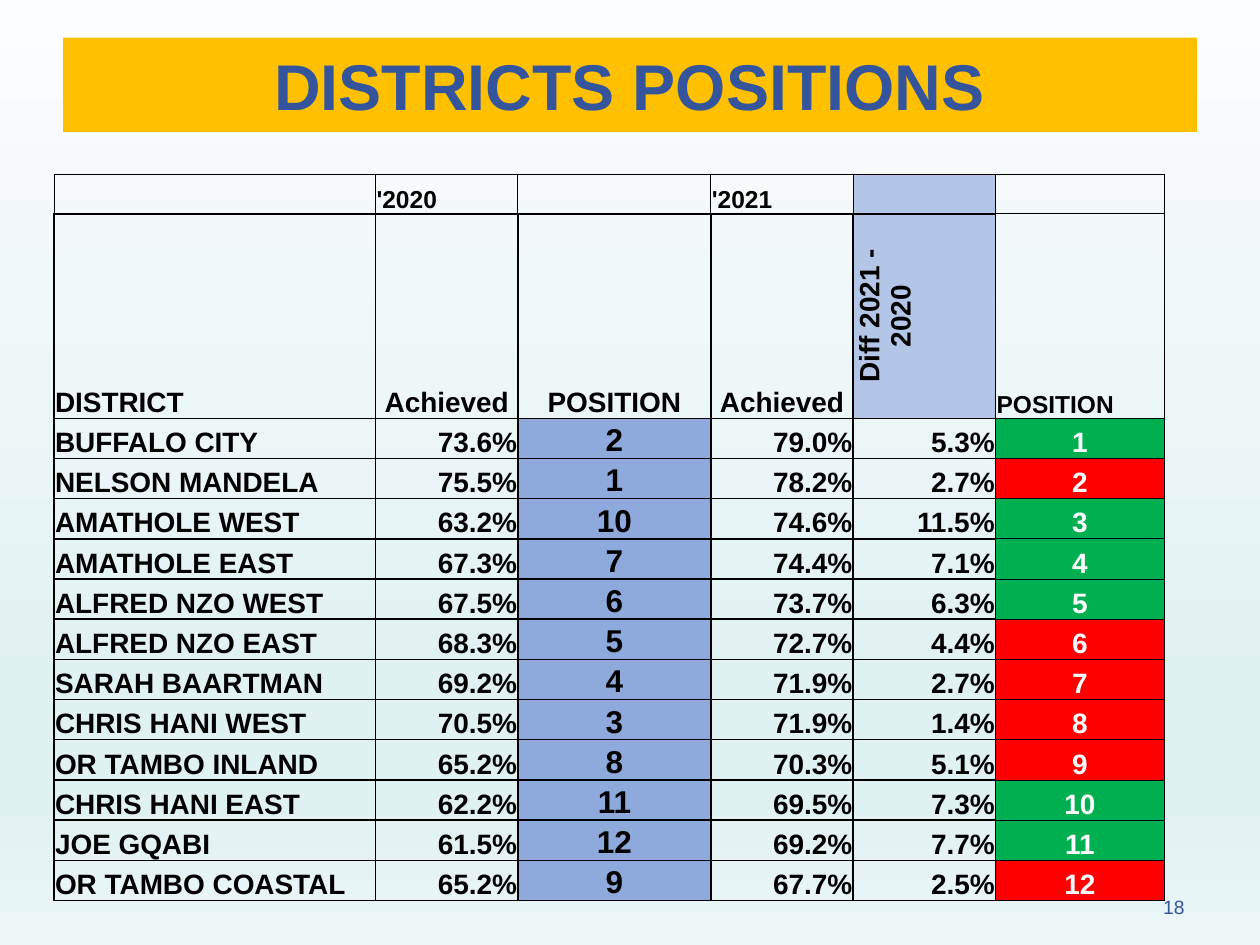
from copy import deepcopy

from lxml.etree import SubElement
from pptx import Presentation
from pptx.dml.color import RGBColor
from pptx.enum.text import MSO_ANCHOR as Anchor, MSO_AUTO_SIZE as AutoSize, PP_ALIGN as Align
from pptx.oxml.ns import qn
from pptx.util import Cm, Pt

TITLE = "DISTRICTS POSITIONS"
PAGE_NUMBER = "18"
YEARS = ["", "'2020", "", "'2021", "", ""]
HEADINGS = ["DISTRICT", "Achieved", "POSITION", "Achieved", "Diff 2021 - 2020", "POSITION"]
# District, achieved 2020, position 2020, achieved 2021, difference; in 2021 order
DISTRICTS = [
    ("BUFFALO CITY", "73.6%", 2, "79.0%", "5.3%"),
    ("NELSON MANDELA", "75.5%", 1, "78.2%", "2.7%"),
    ("AMATHOLE WEST", "63.2%", 10, "74.6%", "11.5%"),
    ("AMATHOLE EAST", "67.3%", 7, "74.4%", "7.1%"),
    ("ALFRED NZO WEST", "67.5%", 6, "73.7%", "6.3%"),
    ("ALFRED NZO EAST", "68.3%", 5, "72.7%", "4.4%"),
    ("SARAH BAARTMAN", "69.2%", 4, "71.9%", "2.7%"),
    ("CHRIS HANI WEST", "70.5%", 3, "71.9%", "1.4%"),
    ("OR TAMBO INLAND", "65.2%", 8, "70.3%", "5.1%"),
    ("CHRIS HANI EAST", "62.2%", 11, "69.5%", "7.3%"),
    ("JOE GQABI", "61.5%", 12, "69.2%", "7.7%"),
    ("OR TAMBO COASTAL", "65.2%", 9, "67.7%", "2.5%"),
]
COLUMN_WIDTHS = [6.48, 2.87, 3.89, 2.87, 2.87, 3.4]
YEAR_HEIGHT, HEADING_HEIGHT, DISTRICT_HEIGHT = 0.79, 2.06, 0.81
HEADING_ALIGNS = [Align.LEFT] + [Align.CENTER] * 4 + [Align.LEFT]
DISTRICT_ALIGNS = [Align.LEFT, Align.RIGHT, Align.CENTER, Align.RIGHT, Align.RIGHT, Align.CENTER]
OLD_POSITION, DIFFERENCE, NEW_POSITION = 2, 4, 5

BLACK, WHITE, NAVY, AMBER = "000000", "FFFFFF", "34549C", "FFC000"
PALE_BLUE, MID_BLUE, GREEN, RED = "B4C6E7", "8EA9DB", "00B050", "FF0000"
BACKGROUND = [(0, "FCFDFE"), (0.74, "E0F1F2"), (0.83, "E0F1F2"), (1, "EBF6F7")]
THIN, THICK = 0.5, 1
CELL_FORMAT = {"margin_left": Cm(0.02), "margin_right": Cm(0.02), "margin_top": Cm(0.02),
               "margin_bottom": 0, "vertical_anchor": Anchor.BOTTOM}


def rgb(color):
    return RGBColor.from_string(color)


def write(frame, text, size, color, align, bold=True):
    paragraph = frame.paragraphs[0]
    paragraph.alignment = align
    run = paragraph.add_run()
    run.text = text
    for name, value in {"name": "Arial", "size": Pt(size), "bold": bold}.items():
        setattr(run.font, name, value)
    run.font.color.rgb = rgb(color)
    return paragraph


def paint_background(slide):
    fill = slide.background.fill
    fill.gradient()
    fill.gradient_angle = 270
    stop_list = slide.element.find(".//" + qn("a:gsLst"))
    while len(stop_list) < len(BACKGROUND):
        stop_list.append(deepcopy(stop_list[0]))
    for stop, (position, color) in zip(fill.gradient_stops, BACKGROUND):
        stop.position = position
        stop.color.rgb = rgb(color)


def draw_borders(cell, row, column):
    widths = dict.fromkeys("LRTB", THICK)
    if column == NEW_POSITION:
        widths = {"L": THICK if row else THIN, "R": THIN, "T": THIN, "B": THIN}
    elif row == 0:
        widths = {"L": THIN, "R": THIN, "T": THIN, "B": THICK}
    properties = cell._tc.get_or_add_tcPr()
    for side, width in widths.items():
        line = SubElement(properties, qn(f"a:ln{side}"), w=str(Pt(width)))
        SubElement(SubElement(line, qn("a:solidFill")), qn("a:srgbClr"), val=BLACK)


def cell_look(row, column, old_position, new_position):
    """Return text size, text colour, alignment and fill of a cell."""
    if row == 0:
        return 14, BLACK, Align.LEFT, PALE_BLUE if column == DIFFERENCE else None
    if row == 1:
        size = 14 if column == NEW_POSITION else 16
        return size, BLACK, HEADING_ALIGNS[column], PALE_BLUE if column == DIFFERENCE else None
    align = DISTRICT_ALIGNS[column]
    if column == OLD_POSITION:
        return 18, BLACK, align, MID_BLUE
    if column == NEW_POSITION:
        return 16, WHITE, align, GREEN if new_position < old_position else RED
    return 16, BLACK, align, None


def add_positions_table(slide):
    rows = [YEARS, HEADINGS] + [(*district, rank) for rank, district in enumerate(DISTRICTS, 1)]
    heights = [YEAR_HEIGHT, HEADING_HEIGHT] + [DISTRICT_HEIGHT] * len(DISTRICTS)
    table = slide.shapes.add_table(len(rows), len(COLUMN_WIDTHS), Cm(1.09), Cm(3.52),
                                   Cm(sum(COLUMN_WIDTHS)), Cm(sum(heights))).table
    table.first_row = table.horz_banding = False
    for column, width in zip(table.columns, COLUMN_WIDTHS):
        column.width = Cm(width)
    for r, (values, height) in enumerate(zip(rows, heights)):
        table.rows[r].height = Cm(height)
        for c, value in enumerate(values):
            cell = table.cell(r, c)
            for name, setting in CELL_FORMAT.items():
                setattr(cell, name, setting)
            draw_borders(cell, r, c)
            size, color, align, fill = cell_look(r, c, values[OLD_POSITION], values[NEW_POSITION])
            if fill:
                cell.fill.solid()
                cell.fill.fore_color.rgb = rgb(fill)
            else:
                cell.fill.background()
            if value:
                write(cell.text_frame, str(value), size, color, align)
    table.cell(1, DIFFERENCE)._tc.get_or_add_tcPr().set("vert", "vert270")


def add_title(slide):
    title = slide.shapes.title
    place = {"left": 1.27, "top": 0.76, "width": 22.86, "height": 1.9}
    for name, length in place.items():
        setattr(title, name, Cm(length))
    title.fill.solid()
    title.fill.fore_color.rgb = rgb(AMBER)
    title.text_frame.auto_size = AutoSize.NONE
    title.text_frame.vertical_anchor = Anchor.MIDDLE
    write(title.text_frame, TITLE, 36.9, NAVY, Align.CENTER)


def add_page_number(slide):
    frame = slide.shapes.add_textbox(Cm(18.21), Cm(17.98), Cm(5.92), Cm(0.69)).text_frame
    frame.word_wrap = True
    number = write(frame, PAGE_NUMBER, 11, NAVY, Align.RIGHT, bold=False)
    number.line_spacing = 0.9
    number.space_after = Pt(6)


def main():
    deck = Presentation()
    deck.slide_width, deck.slide_height = Cm(25.4), Cm(19.05)
    slide = deck.slides.add_slide(deck.slide_layouts[5])
    paint_background(slide)
    add_title(slide)
    add_page_number(slide)
    add_positions_table(slide)
    deck.save("out.pptx")


if __name__ == "__main__":
    main()
